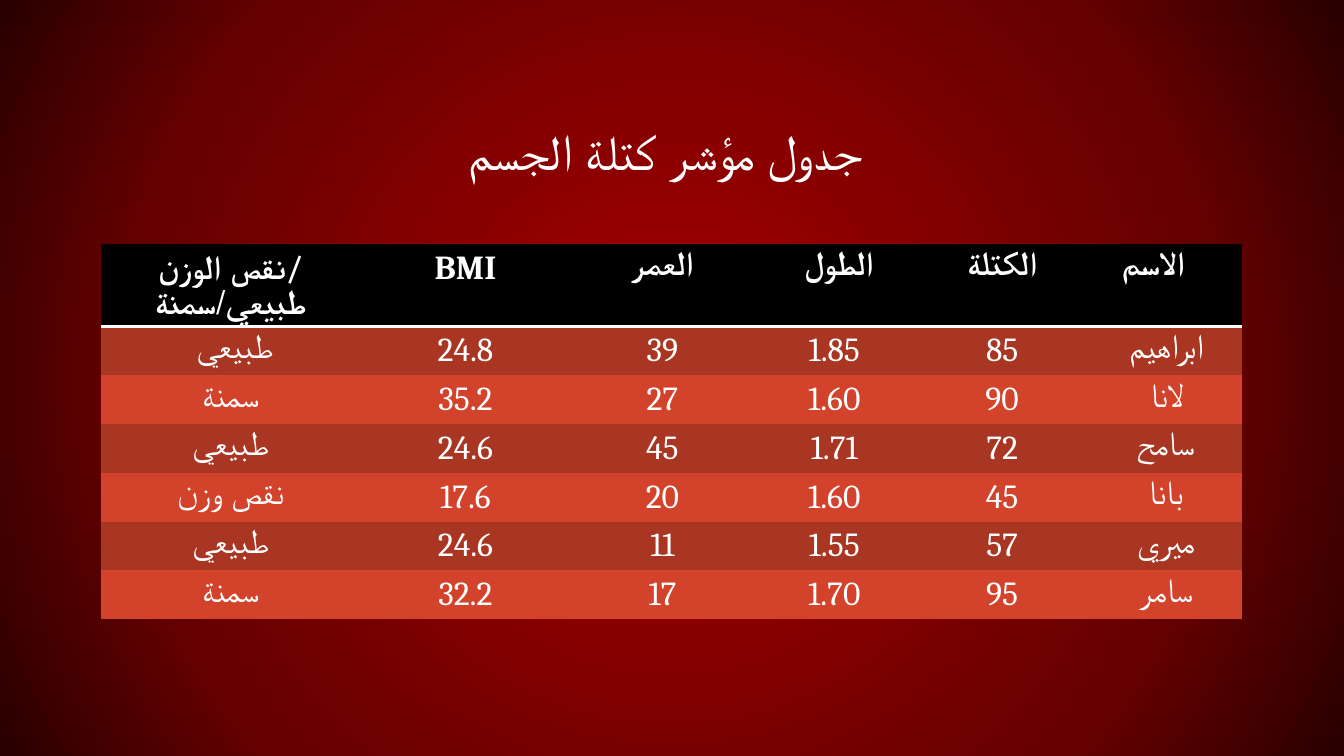
from pptx import Presentation
from pptx.dml.color import RGBColor
from pptx.enum.text import MSO_ANCHOR, PP_ALIGN
from pptx.oxml import parse_xml
from pptx.oxml.ns import nsdecls, qn
from pptx.util import Cm, Pt

FONT = "Cambria"
WHITE, BLACK = "FFFFFF", "000000"
BANDS = ("A93622", "D3432B")
BACKGROUND_STOPS = ((17, "960000"), (71, "650000"), (100, "290000"))
NO_STYLE = "{2D5ABB26-0587-4C30-8999-92F81FD0307C}"
COLUMN_WIDTHS = (6.55, 5.28, 4.65, 4.01, 4.45, 3.81)
HEADER = ("نقص الوزن/\nطبيعي/سمنة", "BMI", "العمر", " الطول", "الكتلة", "الاسم")
PEOPLE = (
    (" طبيعي", "24.8", "39", "1.85", "85", "ابراهيم"),
    ("سمنة", "35.2", "27", "1.60", "90", "لانا"),
    ("طبيعي", "24.6", "45", "1.71", "72", "سامح"),
    ("نقص وزن", "17.6", "20", "1.60", "45", "بانا"),
    ("طبيعي", "24.6", "11", "1.55", "57", "ميري"),
    ("سمنة", "32.2", "17", "1.70", "95", "سامر"),
)


def color(value):
    return RGBColor.from_string(value)


def format_text(frame, size, bold=False):
    for para in frame.paragraphs:
        para.alignment = PP_ALIGN.CENTER
        for span in para.runs:
            span.font.name = FONT
            span.font.size = Pt(size)
            span.font.bold = bold
            span.font.color.rgb = color(WHITE)


def paint_background(page):
    """Fill the page with a gradient that spreads in circles from its centre."""
    page.background.fill.gradient()
    linear = page.element.find(".//" + qn("a:gradFill"))
    stops = "".join(
        f'<a:gs pos="{percent * 1000}"><a:srgbClr val="{value}"/></a:gs>'
        for percent, value in BACKGROUND_STOPS
    )
    radial = parse_xml(
        f'<a:gradFill {nsdecls("a")} rotWithShape="1"><a:gsLst>{stops}</a:gsLst>'
        '<a:path path="circle"><a:fillToRect l="50000" t="50000" r="50000" b="50000"/>'
        "</a:path></a:gradFill>"
    )
    linear.getparent().replace(linear, radial)


def add_title(page, text):
    title = page.shapes.title
    title.left, title.top, title.width, title.height = Cm(2.54), Cm(1.35), Cm(28.78), Cm(3.38)
    frame = title.text_frame
    frame.text = text
    frame.word_wrap = True
    frame.vertical_anchor = MSO_ANCHOR.BOTTOM
    frame.margin_left = frame.margin_right = Cm(0.33)
    frame.margin_top = frame.margin_bottom = Cm(0.18)
    frame.paragraphs[0].line_spacing = 0.8
    format_text(frame, 36)


def add_bottom_border(cell, value, width):
    border = parse_xml(
        f'<a:lnB {nsdecls("a")} w="{Pt(width)}"><a:solidFill>'
        f'<a:srgbClr val="{value}"/></a:solidFill></a:lnB>'
    )
    cell.fill.solid()
    cell._tc.tcPr.insert(0, border)


def fill_cell(cell, text, fill, bold=False):
    cell.text = text
    cell.fill.solid()
    cell.fill.fore_color.rgb = color(fill)
    format_text(cell.text_frame, 24, bold)


def add_mass_table(page):
    row_count = len(PEOPLE) + 1
    row_height = Cm(1.04)
    frame = page.shapes.add_table(
        row_count, len(HEADER), Cm(2.54), Cm(6.15), Cm(sum(COLUMN_WIDTHS)), row_height * row_count
    )
    frame.element.find(".//" + qn("a:tableStyleId")).text = NO_STYLE
    table = frame.table
    table.horz_banding = False
    for column, width in zip(table.columns, COLUMN_WIDTHS):
        column.width = Cm(width)
    for row in table.rows:
        row.height = row_height

    for index, text in enumerate(HEADER):
        cell = table.cell(0, index)
        fill_cell(cell, text, BLACK, bold=True)
        add_bottom_border(cell, WHITE, 2)
    table.cell(0, len(HEADER) - 1).margin_right = Cm(0.9)

    for number, person in enumerate(PEOPLE):
        for index, text in enumerate(person):
            fill_cell(table.cell(number + 1, index), text, BANDS[number % 2])


def main():
    deck = Presentation()
    deck.slide_width, deck.slide_height = Cm(33.87), Cm(19.05)
    page = deck.slides.add_slide(deck.slide_layouts[5])
    paint_background(page)
    add_title(page, "جدول مؤشر كتلة الجسم ")
    add_mass_table(page)
    deck.save("out.pptx")


if __name__ == "__main__":
    main()
